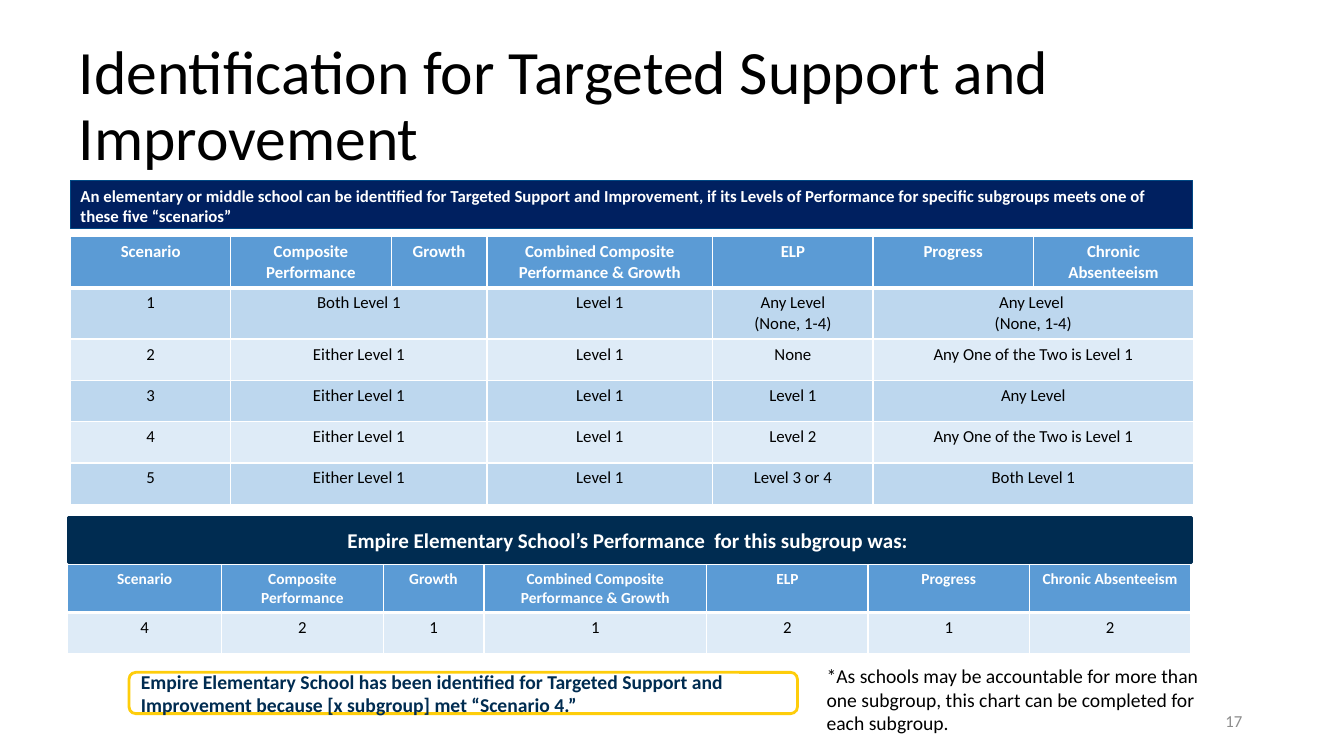
from lxml import etree
from pptx import Presentation
from pptx import util as u
from pptx.dml.color import RGBColor
from pptx.enum import shapes, text
from pptx.oxml.ns import qn

HUES = {
    "white": "FFFFFF", "black": "000000", "grey": "8C8C8C", "head": "5B9BD5",
    "dark": "BDD7EE", "light": "DEEBF7", "blue": "002060", "edge": "004884",
    "navy": "002C51", "gold": "FECD0B",
}
LEFT, MID, RIGHT = text.PP_ALIGN.LEFT, text.PP_ALIGN.CENTER, text.PP_ALIGN.RIGHT
TOP, CENTRE = text.MSO_ANCHOR.TOP, text.MSO_ANCHOR.MIDDLE


def hue(name):
    return RGBColor.from_string(HUES[name])


class Page:
    """Holds the font and the current slide."""

    def __init__(self, deck, font="Calibri"):
        self.font = font
        self.slide = deck.slides.add_slide(deck.slide_layouts[5])

    def label(self, frame, words, size, color, bold=False, align=LEFT):
        frame.text = words
        for para in frame.paragraphs:
            para.alignment = align
            for run in para.runs:
                run.font.name = self.font
                run.font.size = u.Pt(size)
                run.font.bold = bold
                run.font.color.rgb = hue(color)

    def title(self, box, words, size):
        item = self.slide.shapes.title
        item.left, item.top, item.width, item.height = map(u.Inches, box)
        frame = item.text_frame
        frame.word_wrap = True
        frame.auto_size = text.MSO_AUTO_SIZE.NONE
        frame.vertical_anchor = CENTRE
        self.label(frame, words, size, "black")
        frame.paragraphs[0].line_spacing = 0.9

    def panel(self, box, words, size, color, fill, line, width,
              kind=shapes.MSO_SHAPE.RECTANGLE, align=LEFT, anchor=CENTRE):
        item = self.slide.shapes.add_shape(kind, *map(u.Inches, box))
        item.shadow.inherit = False
        item.fill.solid()
        item.fill.fore_color.rgb = hue(fill)
        item.line.color.rgb = hue(line)
        item.line.width = u.Pt(width)
        item.text_frame.word_wrap = True
        item.text_frame.vertical_anchor = anchor
        self.label(item.text_frame, words, size, color, True, align)

    def note(self, box, words, size, color, align=LEFT, anchor=TOP):
        frame = self.slide.shapes.add_textbox(*map(u.Inches, box)).text_frame
        frame.word_wrap = True
        frame.vertical_anchor = anchor
        self.label(frame, words, size, color, align=align)

    def border(self, cell, base):
        """Draw white cell edges, with the bottom one base points wide."""
        props = cell._tc.get_or_add_tcPr()
        edges = {"a:lnL": 1, "a:lnR": 1, "a:lnT": 1, "a:lnB": base}
        for spot, (tag, width) in enumerate(edges.items()):
            line = etree.Element(qn(tag), w=str(u.Pt(width)))
            fill = etree.SubElement(line, qn("a:solidFill"))
            etree.SubElement(fill, qn("a:srgbClr"), val=HUES["white"])
            props.insert(spot, line)

    def table(self, box, cols, rows, bands, size):
        """Fill a grid; None joins a cell to the one on its left."""
        grid = self.slide.shapes.add_table(
            len(rows), len(cols), *map(u.Inches, box)).table
        for col, width in zip(grid.columns, cols):
            col.width = u.Inches(width)
        for r, row in enumerate(rows):
            grid.rows[r].height = u.Inches(0.41)
            head = r == 0
            for c, words in enumerate(row):
                cell = grid.cell(r, c)
                cell.fill.solid()
                cell.fill.fore_color.rgb = hue(
                    "head" if head else bands[(r - 1) % len(bands)])
                self.border(cell, 3 if head else 1)
                if words is None:
                    grid.cell(r, c - 1).merge(cell)
                    continue
                self.label(cell.text_frame, words, size if head else 12,
                           "white" if head else "black", head, MID)


def main():
    deck = Presentation()
    deck.slide_width, deck.slide_height = u.Inches(13.33), u.Inches(7.5)
    page = Page(deck)
    heads = ["Scenario", "Composite Performance", "Growth",
             "Combined Composite Performance & Growth", "ELP", "Progress",
             "Chronic Absenteeism"]
    rules = [
        ("Both Level 1", "Any Level\n(None, 1-4)", "Any Level \n(None, 1-4)"),
        ("Either Level 1", "None", "Any One of the Two is Level 1"),
        ("Either Level 1", "Level 1", "Any Level"),
        ("Either Level 1", "Level 2", "Any One of the Two is Level 1"),
        ("Either Level 1", "Level 3 or 4", "Both Level 1"),
    ]
    cases = [[str(n), pair, None, "Level 1", elp, last, None]
             for n, (pair, elp, last) in enumerate(rules, 1)]

    page.title((0.68, 0.24, 12.46, 1.65),
               "Identification for Targeted Support and Improvement", 44)
    page.table((0.7, 2.35, 11.14, 2.46),
               [1.59, 1.59, 0.95, 2.24, 1.59, 1.59, 1.59],
               [heads] + cases, ["dark", "light"], 12)
    page.panel((0.7, 1.79, 11.13, 0.48),
               "An elementary or middle school can be identified for Targeted "
               "Support and Improvement, if its Levels of Performance for "
               "specific subgroups meets one of these five “scenarios”",
               12, "white", "blue", "edge", 0.75, anchor=TOP)
    page.panel((0.68, 5.13, 11.14, 0.45),
               "Empire Elementary School’s Performance  for this subgroup was: ",
               15, "white", "navy", "navy", 2, align=MID)
    page.table((0.67, 5.6, 11.14, 0.82),
               [1.53, 1.6, 1, 2.21, 1.6, 1.6, 1.6],
               [heads, list("4211212")], ["light"], 11)
    page.panel((1.28, 6.67, 6.63, 0.41),
               "Empire Elementary School has been identified for Targeted "
               "Support and Improvement because [x subgroup] met “Scenario 4.”",
               14, "navy", "white", "gold", 2,
               kind=shapes.MSO_SHAPE.ROUNDED_RECTANGLE)
    page.note((8.1, 6.54, 3.96, 0.81),
              "*As schools may be accountable for more than one subgroup, "
              "this chart can be completed for each subgroup.", 14, "black")
    page.note((9.42, 6.95, 3, 0.4), "17", 12, "grey", RIGHT, CENTRE)
    deck.save("out.pptx")


if __name__ == "__main__":
    main()
